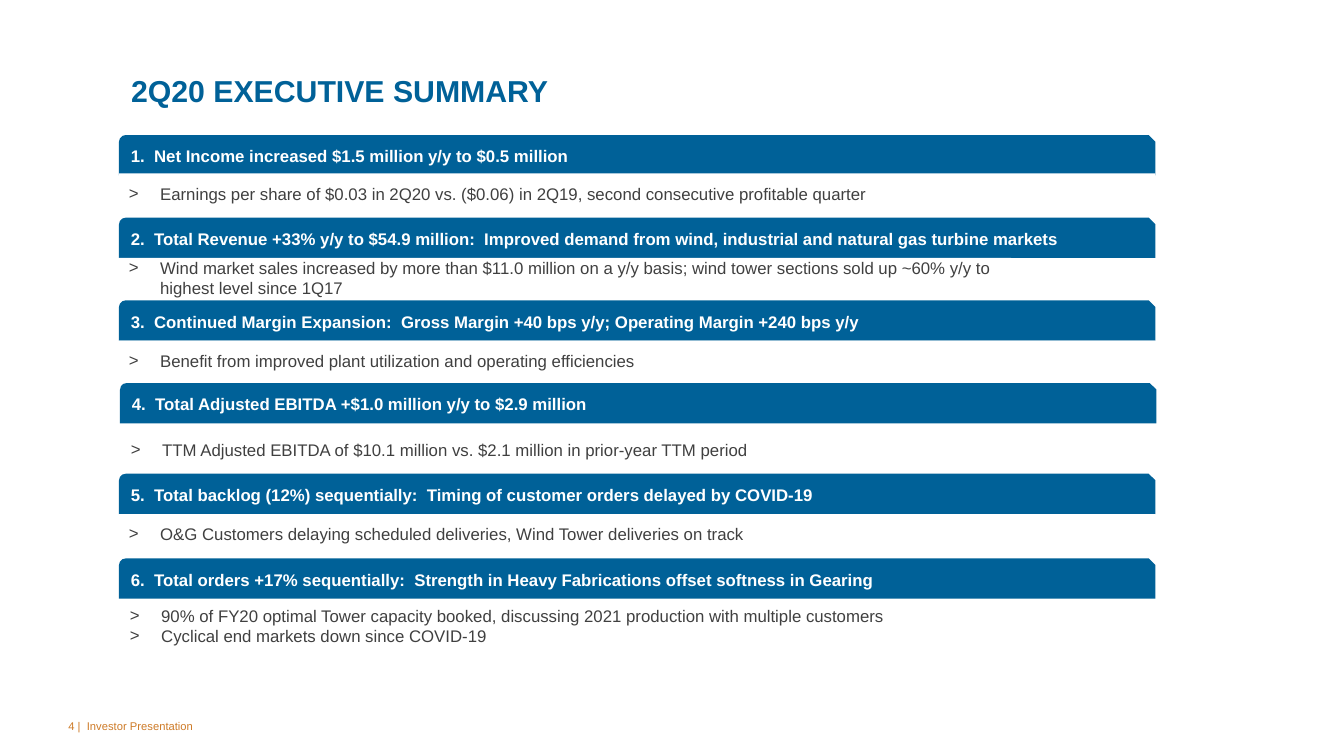
import pptx
import pptx.dml.color
import pptx.enum.shapes
import pptx.enum.text
import pptx.util
from lxml import etree
from pptx.oxml.ns import qn

Inches = pptx.util.Inches
RGBColor = pptx.dml.color.RGBColor
SHAPES = pptx.enum.shapes.MSO_SHAPE
ANCHOR = pptx.enum.text.MSO_ANCHOR
ALIGN = pptx.enum.text.PP_ALIGN

BLUE = RGBColor(0x00, 0x61, 0x98)
WHITE = RGBColor(0xFF, 0xFF, 0xFF)
GREY = RGBColor(0x40, 0x40, 0x40)
ORANGE = RGBColor(0xCE, 0x7B, 0x28)

LEFT, WIDTH, ROW_HEIGHT = 1.18, 10.28, 0.4
INDENT = Inches(0.31)

# heading, heading left and top, details, details left, top and width
SECTIONS = [
    ("1.  Net Income increased $1.5 million y/y to $0.5 million", LEFT, 1.34,
     ["Earnings per share of $0.03 in 2Q20 vs. ($0.06) in 2Q19, "
      "second consecutive profitable quarter"], LEFT, 1.72, WIDTH),
    ("2.  Total Revenue +33% y/y to $54.9 million:  Improved demand from wind, "
     "industrial and natural gas turbine markets", LEFT, 2.16,
     ["Wind market sales increased by more than $11.0 million on a y/y basis; "
      "wind tower sections sold up ~60% y/y to highest level since 1Q17"],
     LEFT, 2.56, 8.85),
    ("3.  Continued Margin Expansion:  Gross Margin +40 bps y/y; "
     "Operating Margin +240 bps y/y", LEFT, 2.98,
     ["Benefit from improved plant utilization and operating efficiencies"],
     LEFT, 3.38, WIDTH),
    ("4.  Total Adjusted EBITDA +$1.0 million y/y to $2.9 million", 1.19, 3.8,
     ["TTM Adjusted EBITDA of $10.1 million vs. $2.1 million in prior-year TTM period"],
     1.2, 4.26, WIDTH),
    ("5.  Total backlog (12%) sequentially:  Timing of customer orders "
     "delayed by COVID-19", LEFT, 4.7,
     ["O&G Customers delaying scheduled deliveries, Wind Tower deliveries on track"],
     LEFT, 5.1, WIDTH),
    ("6.  Total orders +17% sequentially:  Strength in Heavy Fabrications "
     "offset softness in Gearing", LEFT, 5.54,
     ["90% of FY20 optimal Tower capacity booked, discussing 2021 production "
      "with multiple customers",
      "Cyclical end markets down since COVID-19"], 1.19, 6.01, WIDTH),
]


def set_font(paragraph, size, color, bold=False):
    paragraph.alignment = ALIGN.LEFT
    font = paragraph.font
    font.name = "Arial"
    font.size = pptx.util.Pt(size)
    font.bold = bold
    font.color.rgb = color


def add_bullet(paragraph):
    properties = paragraph._p.get_or_add_pPr()
    properties.set("marL", str(INDENT))
    properties.set("indent", str(-INDENT))
    etree.SubElement(properties, qn("a:buFont"), typeface="Arial")
    etree.SubElement(properties, qn("a:buChar"), char=">")


def add_panel(slide, preset, left, top, width, fill):
    panel = slide.shapes.add_shape(
        preset, Inches(left), Inches(top), Inches(width), Inches(ROW_HEIGHT))
    panel.shadow.inherit = False
    panel.fill.solid()
    panel.fill.fore_color.rgb = fill
    panel.line.fill.background()
    panel.text_frame.word_wrap = True
    panel.text_frame.vertical_anchor = ANCHOR.MIDDLE
    return panel.text_frame


def add_heading(slide, text, left, top):
    frame = add_panel(slide, SHAPES.SNIP_ROUND_RECTANGLE, left, top, WIDTH, BLUE)
    frame.text = text
    set_font(frame.paragraphs[0], 12, WHITE, bold=True)


def add_details(slide, details, left, top, width):
    frame = add_panel(slide, SHAPES.RECTANGLE, left, top, width, WHITE)
    frame.text = "\n".join(details)
    for paragraph in frame.paragraphs:
        add_bullet(paragraph)
        set_font(paragraph, 12, GREY)


def set_title(slide, text):
    title = slide.shapes.title
    title.left, title.top = Inches(1.3), Inches(0.69)
    title.width, title.height = Inches(10.81), Inches(0.63)
    frame = title.text_frame
    frame.text = text
    frame.vertical_anchor = ANCHOR.TOP
    frame.margin_left = frame.margin_right = frame.margin_bottom = 0
    frame.margin_top = Inches(0.03)
    set_font(frame.paragraphs[0], 21.6, BLUE, bold=True)


def add_footer(slide, text):
    footer = slide.shapes.add_textbox(Inches(0.58), Inches(7), Inches(3), Inches(0.4))
    frame = footer.text_frame
    frame.word_wrap = True
    frame.vertical_anchor = ANCHOR.MIDDLE
    frame.text = text
    set_font(frame.paragraphs[0], 8, ORANGE)


def main():
    presentation = pptx.Presentation()
    presentation.slide_width = Inches(13.33)
    presentation.slide_height = Inches(7.5)
    slide = presentation.slides.add_slide(presentation.slide_layouts[5])
    set_title(slide, "2Q20 EXECUTIVE SUMMARY")
    add_footer(slide, "4 |  Investor Presentation")
    for heading, left, top, details, details_left, details_top, width in SECTIONS:
        add_heading(slide, heading, left, top)
        add_details(slide, details, details_left, details_top, width)
    presentation.save("out.pptx")


if __name__ == "__main__":
    main()
